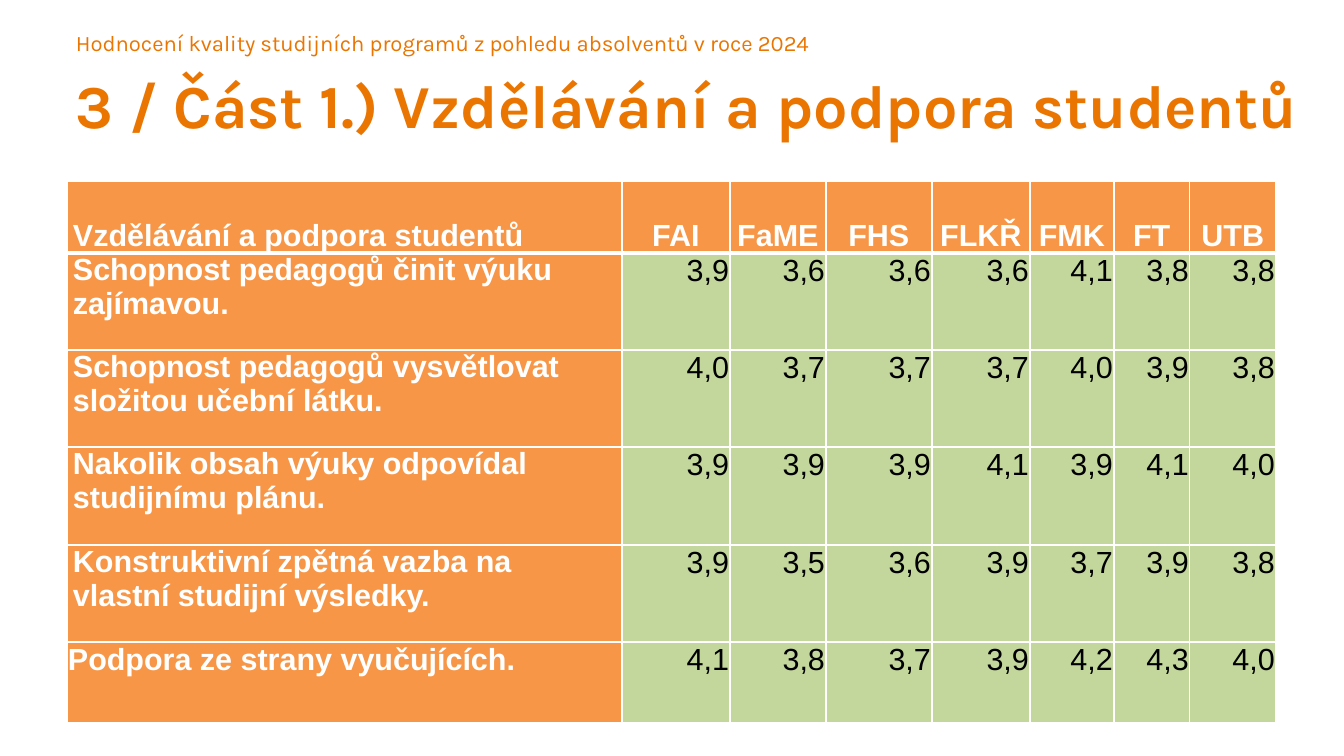
from dataclasses import dataclass

from lxml import etree
from pptx import Presentation
from pptx import util as u
from pptx.dml.color import RGBColor
from pptx.enum import text
from pptx.oxml import ns

EMU_PER_PX = 914400 / 122
COLORS = {
    "heading": "EA7500",
    "label": "F79646",
    "score": "C3D69B",
    "white": "FFFFFF",
    "black": "000000",
}
COLUMN_WIDTHS = [555, 108, 96, 106, 98, 84, 76, 86]
ROW_HEIGHTS = [72, 97, 97, 98, 97, 81]
ROWS = [
    ["Vzdělávání a podpora studentů", "FAI", "FaME", "FHS", "FLKŘ", "FMK", "FT", "UTB"],
    ["Schopnost pedagogů činit výuku zajímavou.", "3,9", "3,6", "3,6", "3,6", "4,1", "3,8", "3,8"],
    ["Schopnost pedagogů vysvětlovat složitou učební látku.", "4,0", "3,7", "3,7", "3,7", "4,0", "3,9", "3,8"],
    ["Nakolik obsah výuky odpovídal studijnímu plánu.", "3,9", "3,9", "3,9", "4,1", "3,9", "4,1", "4,0"],
    ["Konstruktivní zpětná vazba na vlastní studijní výsledky.", "3,9", "3,5", "3,6", "3,9", "3,7", "3,9", "3,8"],
    ["Podpora ze strany vyučujících.", "4,1", "3,8", "3,7", "3,9", "4,2", "4,3", "4,0"],
]


@dataclass(frozen=True)
class Heading:
    words: str
    left: int
    top: int
    width: int
    height: int
    size: int
    bold: bool


@dataclass(frozen=True)
class CellStyle:
    fill: str
    color: str
    bold: bool
    align: text.PP_ALIGN
    side_margin: int
    top_margin: int
    anchor: text.MSO_ANCHOR = text.MSO_ANCHOR.TOP
    spacing: float = 1.0
    bottom_border: int = 1


LEFT, CENTER, RIGHT = text.PP_ALIGN.LEFT, text.PP_ALIGN.CENTER, text.PP_ALIGN.RIGHT
BOTTOM = text.MSO_ANCHOR.BOTTOM
CORNER = CellStyle("label", "white", True, LEFT, 6, 0, BOTTOM, 1.5, 3)
FACULTY = CellStyle("label", "white", True, CENTER, 6, 0, BOTTOM, 1.5, 3)
QUESTION = CellStyle("label", "white", True, LEFT, 6, 0)
LAST_QUESTION = CellStyle("label", "white", True, LEFT, 1, 1)
SCORE = CellStyle("score", "black", False, RIGHT, 1, 1)

SUBTITLE = Heading("Hodnocení kvality studijních programů z pohledu absolventů v roce 2024",
                   76, 29, 1210, 27, 13, False)
TITLE = Heading("3 / Část 1.) Vzdělávání a podpora studentů", 76, 67, 1242, 74, 36, True)


def px(length: int) -> u.Emu:
    return u.Emu(round(length * EMU_PER_PX))


def rgb(name: str) -> RGBColor:
    return RGBColor.from_string(COLORS[name])


def format_font(font, name: str, size: int, color: str, bold: bool) -> None:
    font.name = name
    font.size = u.Pt(size)
    font.bold = bold
    font.color.rgb = rgb(color)


def write_heading(box, heading: Heading) -> None:
    box.left, box.top = px(heading.left), px(heading.top)
    box.width, box.height = px(heading.width), px(heading.height)
    frame = box.text_frame
    frame.word_wrap = True
    frame.auto_size = text.MSO_AUTO_SIZE.SHAPE_TO_FIT_TEXT
    frame.vertical_anchor = text.MSO_ANCHOR.TOP
    frame.margin_left = frame.margin_right = frame.margin_top = frame.margin_bottom = 0
    para = frame.paragraphs[0]
    para.text = heading.words
    para.alignment = LEFT
    format_font(para.font, "Karla", heading.size, "heading", heading.bold)


def add_borders(cell, bottom: int) -> None:
    properties = cell._tc.get_or_add_tcPr()
    for index, (side, points) in enumerate([("L", 1), ("R", 1), ("T", 1), ("B", bottom)]):
        line = etree.Element(ns.qn(f"a:ln{side}"), w=str(u.Pt(points)))
        fill = etree.SubElement(line, ns.qn("a:solidFill"))
        etree.SubElement(fill, ns.qn("a:srgbClr"), val=COLORS["white"])
        properties.insert(index, line)


def write_cell(cell, words: str, style: CellStyle) -> None:
    cell.fill.solid()
    cell.fill.fore_color.rgb = rgb(style.fill)
    cell.margin_left = cell.margin_right = px(style.side_margin)
    cell.margin_top, cell.margin_bottom = px(style.top_margin), 0
    cell.vertical_anchor = style.anchor
    para = cell.text_frame.paragraphs[0]
    para.text = words
    para.alignment = style.align
    para.line_spacing = style.spacing
    format_font(para.font, "Arial", 18, style.color, style.bold)
    add_borders(cell, style.bottom_border)


def cell_style(row: int, column: int) -> CellStyle:
    if row == 0:
        return FACULTY if column else CORNER
    if column:
        return SCORE
    return LAST_QUESTION if row == len(ROWS) - 1 else QUESTION


def add_score_table(page) -> None:
    table = page.shapes.add_table(len(ROWS), len(COLUMN_WIDTHS), px(67), px(181),
                                  px(sum(COLUMN_WIDTHS)), px(sum(ROW_HEIGHTS))).table
    table.horz_banding = False
    for column, width in zip(table.columns, COLUMN_WIDTHS):
        column.width = px(width)
    for row, height in zip(table.rows, ROW_HEIGHTS):
        row.height = px(height)
    for row, entries in enumerate(ROWS):
        for column, words in enumerate(entries):
            write_cell(table.cell(row, column), words, cell_style(row, column))


def main() -> None:
    deck = Presentation()
    deck.slide_width, deck.slide_height = px(1344), px(756)
    page = deck.slides.add_slide(deck.slide_layouts.get_by_name("Title Only"))
    write_heading(page.shapes.title, TITLE)
    write_heading(page.shapes.add_textbox(0, 0, 0, 0), SUBTITLE)
    add_score_table(page)
    deck.save("out.pptx")


if __name__ == "__main__":
    main()
